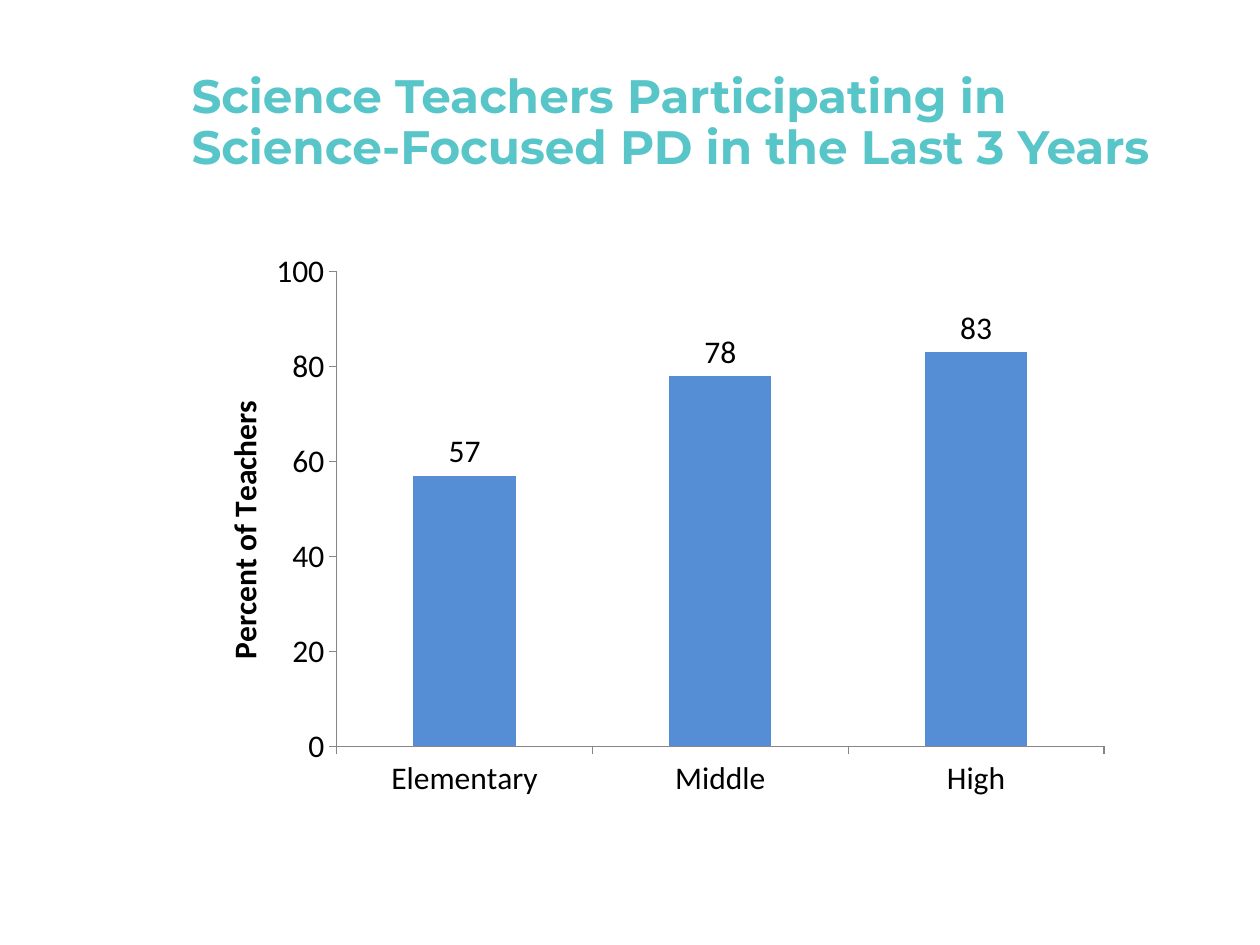
from lxml import etree
from pptx import Presentation
from pptx.chart.data import CategoryChartData
from pptx.dml.color import RGBColor
from pptx.enum.chart import XL_CHART_TYPE, XL_LABEL_POSITION, XL_TICK_MARK
from pptx.enum.text import MSO_ANCHOR, MSO_AUTO_SIZE, PP_ALIGN
from pptx.oxml.ns import qn
from pptx.util import Pt

TITLE = "Science Teachers Participating in Science-Focused PD in the Last 3 Years"
AXIS_TITLE = "Percent of Teachers"
SERIES = "Series 1"
PERCENTS = {"Elementary": 57, "Middle": 78, "High": 83}

TEAL = RGBColor(0x58, 0xC5, 0xC9)
BLUE = RGBColor(0x55, 0x8E, 0xD5)
BLACK = RGBColor(0, 0, 0)
GRAY = RGBColor(0x86, 0x86, 0x86)

LEFT = 102.24
TITLE_BOX = (LEFT, 21.6, 581.76, 98.64)
CHART_BOX = (LEFT, 138.24, 540, 324)


def set_layout(parent, after, **values):
    """Place a chart part by fractions of the chart's size."""
    for old in parent.findall(qn("c:layout")):
        parent.remove(old)
    layout = etree.Element(qn("c:layout"))
    manual = etree.SubElement(layout, qn("c:manualLayout"))
    for name, value in values.items():
        etree.SubElement(manual, qn(f"c:{name}")).set("val", str(value))
    if after is None:
        parent.insert(0, layout)
    else:
        after.addnext(layout)


def add_title(slide):
    title = slide.shapes.title
    title.left, title.top, title.width, title.height = map(Pt, TITLE_BOX)
    tf = title.text_frame
    tf.word_wrap = True
    tf.auto_size = MSO_AUTO_SIZE.NONE
    tf.vertical_anchor = MSO_ANCHOR.MIDDLE
    p = tf.paragraphs[0]
    p.alignment = PP_ALIGN.LEFT
    p.line_spacing = 0.9
    r = p.add_run()
    r.text = TITLE
    r.font.name, r.font.size, r.font.bold = "Montserrat", Pt(26.8), True
    r.font.color.rgb = TEAL


def add_column_chart(slide):
    data = CategoryChartData()
    data.categories = list(PERCENTS)
    data.add_series(SERIES, list(PERCENTS.values()))
    chart = slide.shapes.add_chart(
        XL_CHART_TYPE.COLUMN_CLUSTERED, *map(Pt, CHART_BOX), data).chart
    chart.has_legend = False
    chart.has_title = False
    chart.font.name, chart.font.size = "Calibri", Pt(18)
    chart.font.color.rgb = BLACK

    for axis in (chart.category_axis, chart.value_axis):
        axis.has_major_gridlines = False
        axis.major_tick_mark = XL_TICK_MARK.OUTSIDE
        axis.minor_tick_mark = XL_TICK_MARK.NONE
        axis.format.line.color.rgb = GRAY
        axis.format.line.width = Pt(0.75)

    value_axis = chart.value_axis
    value_axis.minimum_scale, value_axis.maximum_scale = 0, 100
    value_axis.major_unit = 20
    r = value_axis.axis_title.text_frame.paragraphs[0].add_run()
    r.text = AXIS_TITLE
    r.font.name, r.font.size, r.font.bold = "Calibri", Pt(18), True
    r.font.color.rgb = BLACK
    title_xml = value_axis.axis_title._element
    title_xml.find(".//" + qn("a:bodyPr")).set("rot", "-5400000")
    set_layout(title_xml, title_xml.find(qn("c:tx")),
               xMode="edge", yMode="edge", x=0.04, y=0.27)

    plot = chart.plots[0]
    plot.gap_width = 150
    plot.vary_by_categories = False
    set_layout(plot._element.getparent(), None, layoutTarget="inner",
               xMode="edge", yMode="edge", x=0.167, y=0.052, w=0.812, h=0.838)
    fill = plot.series[0].format.fill
    fill.solid()
    fill.fore_color.rgb = BLUE
    plot.has_data_labels = True
    labels = plot.data_labels
    labels.show_value = True
    labels.position = XL_LABEL_POSITION.OUTSIDE_END


prs = Presentation()
prs.slide_width, prs.slide_height = Pt(720), Pt(540)
s = prs.slides.add_slide(prs.slide_layouts[5])
add_column_chart(s)
add_title(s)
prs.save("out.pptx")
